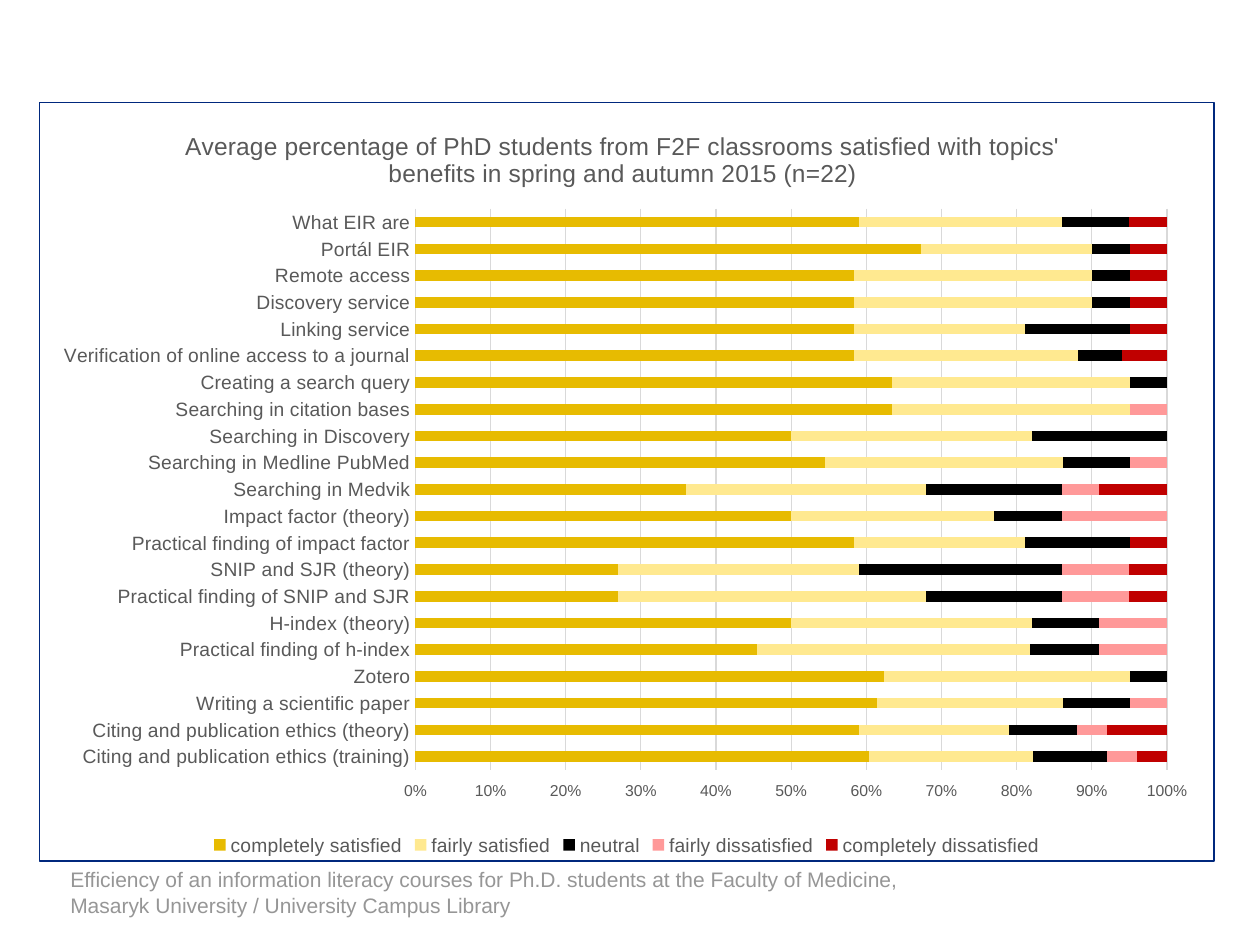
from dataclasses import dataclass

from lxml import etree
from pptx import Presentation
from pptx.chart.data import CategoryChartData
from pptx.dml.color import RGBColor
from pptx.enum.chart import XL_CHART_TYPE as ChartType, XL_LEGEND_POSITION as LegendPos
from pptx.enum.chart import XL_TICK_LABEL_POSITION as LabelPos, XL_TICK_MARK as Tick
from pptx.enum.text import MSO_ANCHOR
from pptx.oxml import parse_xml
from pptx.oxml.ns import nsdecls, qn
from pptx.util import Inches, Pt

FONT = "Arial"
COLORS = {"text": "595959", "grid": "D9D9D9", "border": "00287D", "footer": "969696"}
TITLE = ("Average percentage of PhD students from F2F classrooms satisfied "
         "with topics' benefits in spring and autumn 2015 (n=22)")
FOOTER = ("Efficiency of an information literacy courses for Ph.D. students at the "
          "Faculty of Medicine, Masaryk University / University Campus Library")
TOPICS = [
    "What EIR are", "Portál EIR", "Remote access", "Discovery service",
    "Linking service", "Verification of online access to a journal",
    "Creating a search query", "Searching in citation bases",
    "Searching in Discovery", "Searching in Medline PubMed", "Searching in Medvik",
    "Impact factor (theory)", "Practical finding of impact factor",
    "SNIP and SJR (theory)", "Practical finding of SNIP and SJR",
    "H-index (theory)", "Practical finding of h-index", "Zotero",
    "Writing a scientific paper", "Citing and publication ethics (theory)",
    "Citing and publication ethics (training)",
]


@dataclass
class Rating:
    name: str
    color: str
    values: list[int]


RATINGS = [
    Rating("completely satisfied", "E7BB01",
           [59, 68, 59, 59, 59, 59, 64, 64, 50, 55, 36, 50, 59, 27, 27, 50, 45, 63, 62, 59, 61]),
    Rating("fairly satisfied", "FFE990",
           [27, 23, 32, 32, 23, 30, 32, 32, 32, 32, 32, 27, 23, 32, 41, 32, 36, 33, 25, 20, 22]),
    Rating("neutral", "000000",
           [9, 5, 5, 5, 14, 6, 5, 0, 18, 9, 18, 9, 14, 27, 18, 9, 9, 5, 9, 9, 10]),
    Rating("fairly dissatisfied", "FF9999",
           [0, 0, 0, 0, 0, 0, 0, 5, 0, 5, 5, 14, 0, 9, 9, 9, 9, 0, 5, 4, 4]),
    Rating("completely dissatisfied", "C00000",
           [5, 5, 5, 5, 5, 6, 0, 0, 0, 0, 9, 0, 5, 5, 5, 0, 0, 0, 0, 8, 4]),
]


def set_font(font, size: float, color: str) -> None:
    font.name, font.size, font.bold = FONT, Pt(size), False
    font.color.rgb = RGBColor.from_string(color)


def set_line(line, color: str) -> None:
    line.color.rgb = RGBColor.from_string(color)
    line.width = Pt(0.75)


def set_layout(parent, before: str, inner: bool = False, **shares: float) -> None:
    """Place a chart part by shares of the chart area, ahead of the given tag."""
    for old in parent.findall(qn("c:layout")):
        parent.remove(old)
    layout = parse_xml(f'<c:layout {nsdecls("c")}><c:manualLayout/></c:layout>')
    entries = {"layoutTarget": "inner"} if inner else {}
    entries |= {"xMode": "edge", "yMode": "edge"} | shares
    for tag, val in entries.items():
        etree.SubElement(layout[0], qn(f"c:{tag}")).set("val", str(val))
    parent.find(qn(before)).addprevious(layout)


def add_border(chart, color: str) -> None:
    chart.element.find(qn("c:chart")).addnext(parse_xml(
        f'<c:spPr {nsdecls("c", "a")}><a:solidFill><a:srgbClr val="FFFFFF"/></a:solidFill>'
        f'<a:ln w="{Pt(0.75)}"><a:solidFill><a:srgbClr val="{color}"/></a:solidFill></a:ln>'
        '</c:spPr>'))


def format_axes(chart) -> None:
    """Topics run from top to bottom, with the percentages below the last one."""
    topics, share = chart.category_axis, chart.value_axis
    for axis, size in ((topics, 11), (share, 9)):
        axis.major_tick_mark = axis.minor_tick_mark = Tick.NONE
        set_font(axis.tick_labels.font, size, COLORS["text"])
    topics.reverse_order = True
    set_line(topics.format.line, COLORS["grid"])
    share.tick_label_position = LabelPos.HIGH
    share.minimum_scale, share.maximum_scale, share.major_unit = 0, 1, 0.1
    share.tick_labels.number_format = "0%"
    share.tick_labels.number_format_is_linked = False
    share.format.line.fill.background()
    set_line(share.major_gridlines.format.line, COLORS["grid"])


def add_satisfaction_chart(s) -> None:
    data = CategoryChartData()
    data.categories = TOPICS
    for rating in RATINGS:
        data.add_series(rating.name, rating.values)
    chart = s.shapes.add_chart(ChartType.BAR_STACKED_100, Inches(0.31), Inches(0.81),
                               Inches(9.33), Inches(6.03), data).chart
    set_font(chart.font, 10, "000000")
    add_border(chart, COLORS["border"])

    p = chart.chart_title.text_frame.paragraphs[0]
    p.text = TITLE
    set_font(p.font, 14, COLORS["text"])
    chart.chart_title.include_in_layout = False
    set_layout(chart.chart_title._element, "c:overlay", x=0.12, y=0.03)

    plot = chart.plots[0]
    plot.gap_width, plot.overlap, plot.vary_by_categories = 150, 100, False
    for series, rating in zip(plot.series, RATINGS):
        series.format.fill.solid()
        series.format.fill.fore_color.rgb = RGBColor.from_string(rating.color)
    format_axes(chart)
    set_layout(chart.element.find(".//" + qn("c:plotArea")), "c:barChart",
               inner=True, x=0.32, y=0.14, w=0.64, h=0.74)

    chart.has_legend = True
    chart.legend.position = LegendPos.BOTTOM
    chart.legend.include_in_layout = False
    set_font(chart.legend.font, 11, COLORS["text"])


def add_footer(s) -> None:
    tf = s.shapes.add_textbox(Inches(0.46), Inches(6.83), Inches(6.9), Inches(0.5)).text_frame
    tf.word_wrap = True
    tf.vertical_anchor = MSO_ANCHOR.BOTTOM
    p = tf.paragraphs[0]
    p.text = FOOTER
    set_font(p.font, 12, COLORS["footer"])


def main() -> None:
    prs = Presentation()
    prs.slide_width, prs.slide_height = Inches(10), Inches(7.5)
    s = prs.slides.add_slide(prs.slide_layouts[6])
    add_footer(s)
    add_satisfaction_chart(s)
    prs.save("out.pptx")


if __name__ == "__main__":
    main()
